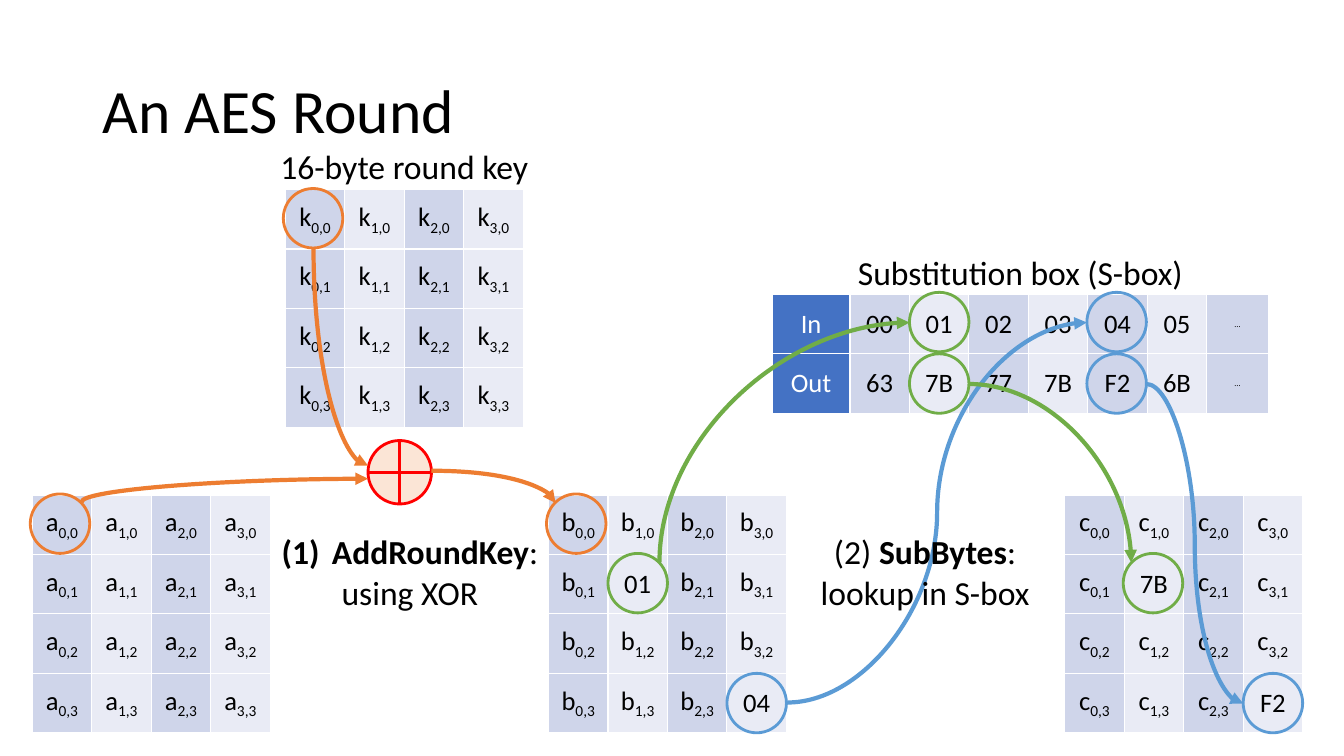
import pptx
import pptx.util
import pptx.dml.color
import pptx.enum.shapes
import pptx.enum.text
import pptx.oxml.ns
from lxml import etree

HUES = {
    "black": "000000", "white": "FFFFFF", "head": "4472C4",
    "dark": "CFD5EA", "light": "E9EBF5", "orange": "ED7D31",
    "blue": "5B9BD5", "green": "70AD47", "red": "FF0000", "peach": "FBE5D6",
}
UNIT = 9144   # EMU in one px, 100 px to the inch
SIDE = 59     # side of a byte cell and of a ring
BOLD = {"bold": True}
SUB = {"sub": True}
KINDS = pptx.enum.shapes.MSO_SHAPE
MID = pptx.enum.text.MSO_ANCHOR.MIDDLE
CENTER = pptx.enum.text.PP_ALIGN.CENTER
LEFT = pptx.enum.text.PP_ALIGN.LEFT


def px(*nums):
    return [pptx.util.Emu(n * UNIT) for n in nums]


def hue(name):
    return pptx.dml.color.RGBColor.from_string(HUES[name])


def node(parent, tag, **attrs):
    return etree.SubElement(parent, pptx.oxml.ns.qn("a:" + tag), attrs)


class Canvas:
    def __init__(self, slide, font="Calibri"):
        self.slide = slide
        self.font = font

    def fill_in(self, para, runs, size, color="black", align=CENTER):
        para.alignment = align
        for text, style in runs:
            run = para.add_run()
            run.text = text
            look = {"name": self.font, "size": pptx.util.Pt(size),
                    "bold": style.get("bold", False)}
            for key, value in look.items():
                setattr(run.font, key, value)
            run.font.color.rgb = hue(color)
            if style.get("sub"):
                run._r.get_or_add_rPr().set("baseline", "-25000")

    def title(self, text, *box):
        shape = self.slide.shapes.title
        for key, value in zip(("left", "top", "width", "height"), px(*box)):
            setattr(shape, key, value)
        shape.text_frame.vertical_anchor = MID
        para = shape.text_frame.paragraphs[0]
        para.line_spacing = 0.9
        self.fill_in(para, [(text, {})], 44, align=LEFT)

    def label(self, lines, *box, number=False):
        frame = self.slide.shapes.add_textbox(*px(*box)).text_frame
        frame.word_wrap = True
        frame.auto_size = pptx.enum.text.MSO_AUTO_SIZE.SHAPE_TO_FIT_TEXT
        for i, runs in enumerate(lines):
            para = frame.add_paragraph() if i else frame.paragraphs[0]
            self.fill_in(para, runs, 24)
        if number:
            props = frame.paragraphs[0]._p.get_or_add_pPr()
            props.set("marL", str(50 * UNIT))
            props.set("indent", str(-50 * UNIT))
            node(props, "buFont", typeface="+mj-lt")
            node(props, "buAutoNum", type="arabicParenBoth")

    def cell(self, cell, runs, size, color, fill):
        cell.vertical_anchor = MID
        self.fill_in(cell.text_frame.paragraphs[0], runs, size, color)
        props = cell._tc.get_or_add_tcPr()
        for edge in ("lnL", "lnR", "lnT", "lnB"):
            line = node(props, edge, w="12700")
            node(node(line, "solidFill"), "srgbClr", val=HUES["white"])
        cell.fill.solid()
        cell.fill.fore_color.rgb = hue(fill)

    def grid(self, left, top, widths, count):
        box = px(left, top, sum(widths), SIDE * count)
        table = self.slide.shapes.add_table(count, len(widths), *box).table
        table.first_row = table.horz_banding = False
        for col, width in zip(table.columns, px(*widths)):
            col.width = width
        for row in table.rows:
            row.height = px(SIDE)[0]
        return table

    def state(self, name, left, top, known):
        table = self.grid(left, top, [SIDE] * 4, 4)
        for row in range(4):
            for col in range(4):
                runs = [(name, {}), (f"{col},{row}", SUB)]
                if (col, row) in known:
                    runs = [(known[col, row], {})]
                fill = "light" if col % 2 else "dark"
                self.cell(table.cell(row, col), runs, 19, "black", fill)

    def lookup(self, left, top, widths, rows):
        table = self.grid(left, top, widths, len(rows))
        for r, row in enumerate(rows):
            for c, text in enumerate(row):
                fill = ("dark" if c % 2 else "light") if c else "head"
                self.cell(table.cell(r, c), [(text, {})], 6 if text == "…" else 19,
                          "black" if c else "white", fill)

    def ring(self, color, left, top, size=SIDE, kind=KINDS.OVAL, fill=None, turn=0):
        shape = self.slide.shapes.add_shape(kind, *px(left, top, size, size))
        shape.shadow.inherit = False
        shape.rotation = turn
        shape.line.color.rgb = hue(color)
        shape.line.width = pptx.util.Pt(2)
        if fill:
            shape.fill.solid()
            shape.fill.fore_color.rgb = hue(fill)
        else:
            shape.fill.background()

    def curve(self, color, start, end, bend="across"):
        """bend: 'across' or 'upright' for one quarter turn, 'ess' for an S."""
        kind = pptx.enum.shapes.MSO_CONNECTOR.CURVE
        link = self.slide.shapes.add_connector(kind, *px(*start, *end))
        link.line.color.rgb = hue(color)
        link.line.width = pptx.util.Pt(3)
        node(link.get_or_add_ln(), "tailEnd", type="triangle")
        props = link._element.spPr
        node(props, "effectLst")
        if bend != "ess":
            props.find(pptx.oxml.ns.qn("a:prstGeom")).set("prst", "curvedConnector2")
        if bend == "upright":
            # the box is laid on its side about its own centre
            mid = (link.left + link.width // 2, link.top + link.height // 2)
            wide, high = link.height, link.width
            link.left, link.top = mid[0] - wide // 2, mid[1] - high // 2
            link.width, link.height = wide, high
            down = end[1] > start[1]
            form = props.find(pptx.oxml.ns.qn("a:xfrm"))
            form.set("rot", str((270 if down else 90) * 60000))
            form.set("flipH", "1")
            form.set("flipV", "0" if down else "1")


def main():
    deck = pptx.Presentation()
    deck.slide_width, deck.slide_height = px(1333, 750)
    art = Canvas(deck.slides.add_slide(deck.slide_layouts[5]))
    art.title("An AES Round", 92, 40, 1150, 145)

    # Byte states, round key and S-box
    for name, left, top, known in (
            ("a", 32, 491, {}),
            ("b", 544, 491, {(1, 1): "01", (3, 3): "04"}),
            ("c", 1056, 491, {(1, 1): "7B", (3, 3): "F2"}),
            ("k", 283, 188, {})):
        art.state(name, left, top, known)
    art.lookup(766, 292, [77] + [SIDE] * 6 + [61], [
        ["In", "00", "01", "02", "03", "04", "05", "…"],
        ["Out", "63", "7B", "77", "7B", "F2", "6B", "…"]])

    # Rings around the bytes that are followed
    rings = {
        "orange": [(281, 187), (30, 490), (542, 490)],
        "blue": [(721, 668), (1233, 668), (1078, 290), (1078, 351)],
        "green": [(603, 549), (1114, 549), (902, 290), (902, 351)],
    }
    for color, spots in rings.items():
        for spot in spots:
            art.ring(color, *spot)
    art.ring("red", 365, 437, 63, KINDS.FLOWCHART_SUMMING_JUNCTION, "peach", 315)

    # Paths of the bytes
    for route in (
            ("orange", (311, 246), (365, 462), "upright"),
            ("orange", (81, 498), (365, 475), "upright"),
            ("orange", (428, 467), (551, 499)),
            ("blue", (781, 697), (1078, 320), "ess"),
            ("blue", (1137, 381), (1233, 698), "ess"),
            ("green", (654, 558), (902, 320), "upright"),
            ("green", (961, 381), (1122, 558))):
        art.curve(*route)

    # Captions
    art.label([[("16-byte round key", {})]], 204, 140, 394, 50)
    art.label([[("Substitution box (S-box)", {})]], 766, 245, 492, 50)
    art.label([[("AddRoundKey", BOLD), (":", {})], [("using XOR", {})]],
              264, 522, 285, 91, number=True)
    art.label([[("(2) ", {}), ("SubBytes", BOLD), (":", {})],
               [("lookup in S-box", {})]], 775, 522, 285, 91)
    deck.save("out.pptx")


if __name__ == "__main__":
    main()
